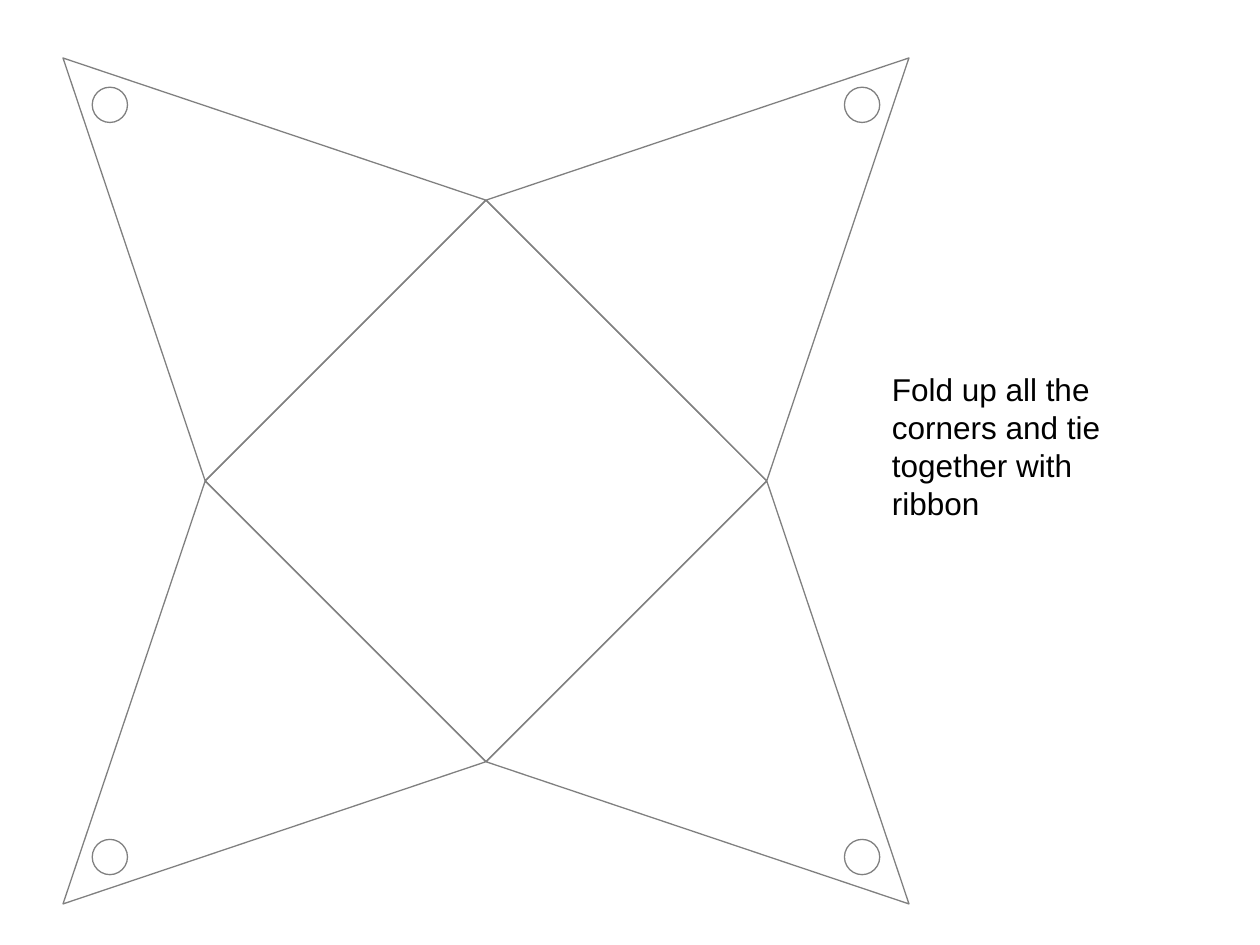
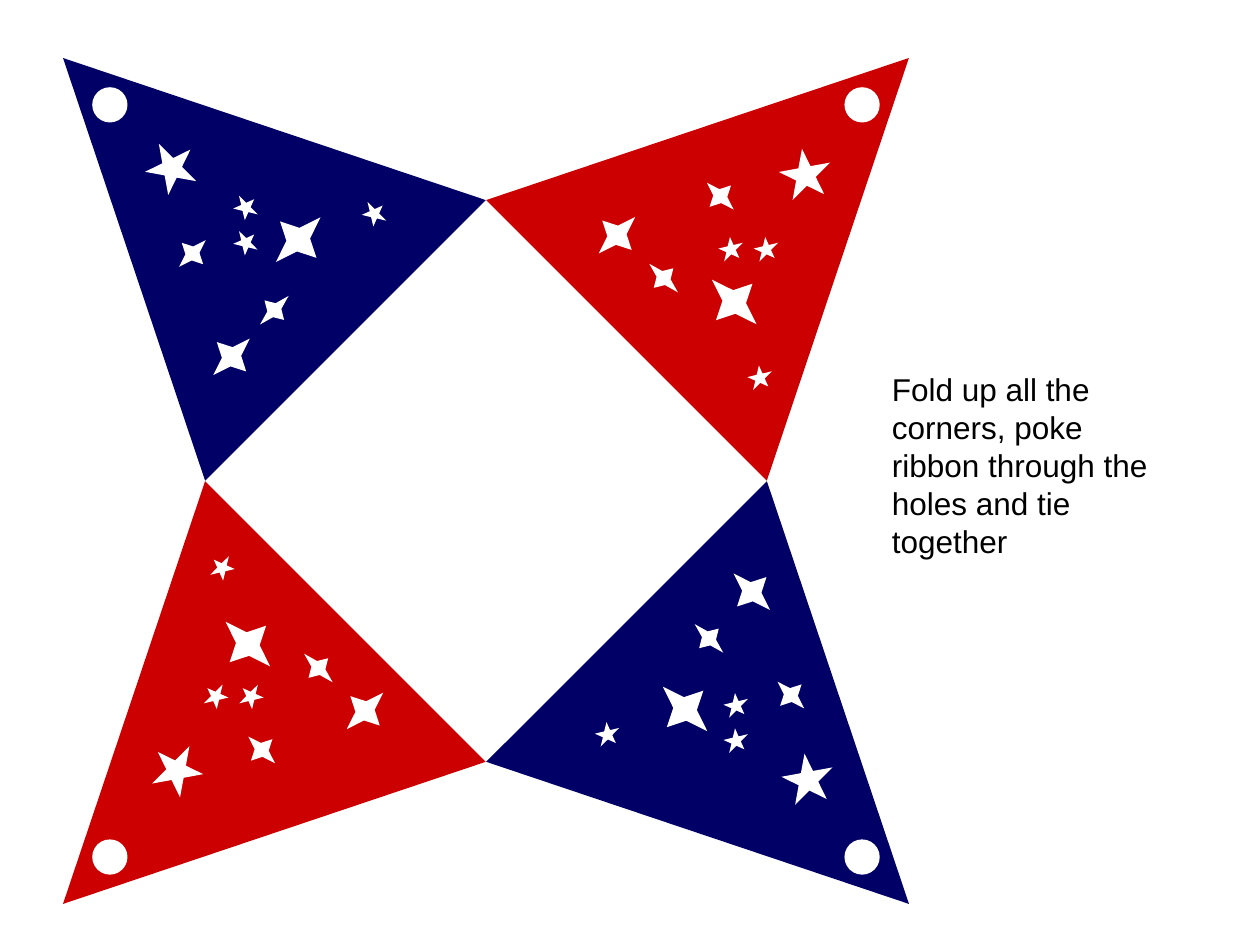
from collections import namedtuple

from pptx import Presentation
from pptx.dml.color import RGBColor
from pptx.enum.shapes import MSO_SHAPE as Preset
from pptx.enum.text import MSO_AUTO_SIZE as AutoSize
from pptx.util import Inches, Pt

COLORS = {"paper": "FFFFFF", "outline": "808080", "navy": "000066",
          "red": "CC0000", "ink": "000000"}
FONT = "Arial"
SLIDE_WIDTH, SLIDE_HEIGHT = Inches(10), Inches(7.5)
COLUMN = SLIDE_WIDTH / 100
ROW = SLIDE_HEIGHT / 75

Box = namedtuple("Box", "left top width height")
Flap = namedtuple("Flap", "quarter color drift lead_tilt spark_tilt star_tilt")
Spark = namedtuple("Spark", "x y width height")

PATTERN_BOX = Box(4.97, 4.57, 67.2, 67.2)
BASE_SIDE = 31.5
FLAP_HEIGHT = 31.7
FLAP_REACH = 22.36
HOLE_REACH = 29.85
HOLE_SIZE = 2.8

FLAPS = [
    Flap(0, "navy", (0, 0), 45, 45, 135),
    Flap(3, "red", (1.6, 1.6), 315, 45, 135),
    Flap(1, "red", (-0.8, -2.85), 135, 45, 315),
    Flap(2, "navy", (0.9, -1.05), 135, 135, 45),
]
FOUR_POINT = [
    Spark(21.1, 8.8, 4.1, 3.3),
    Spark(15.8, 18.1, 5, 4.1),
    Spark(24.2, 17, 3, 2.4),
    Spark(17.7, 12.5, 3.2, 2.2),
]
FIVE_POINT = [
    Spark(25.7, 23.9, 4.2, 3.8),
    Spark(19.9, 17.9, 2.1, 1.7),
    Spark(19.9, 20.7, 2.1, 1.7),
    Spark(9.7, 20.2, 2.1, 1.7),
]


def rgb(name):
    """Return the named colour."""
    return RGBColor.from_string(COLORS[name])


def turn(x, y, quarter):
    """Turn an offset clockwise by quarter circles."""
    for _ in range(quarter):
        x, y = -y, x
    return x, y


def add_piece(shapes, preset, box, offset, size, tilt=0, fill="paper", line=None):
    """Add a paper piece centred at an offset from the middle of the box."""
    width, height = size
    left = box.left + box.width / 2 + offset[0] - width / 2
    top = box.top + box.height / 2 + offset[1] - height / 2
    piece = shapes.add_shape(preset, round(left * COLUMN), round(top * ROW),
                             round(width * COLUMN), round(height * ROW))
    piece.rotation = tilt
    piece.shadow.inherit = False
    piece.fill.solid()
    piece.fill.fore_color.rgb = rgb(fill)
    if line:
        piece.line.color.rgb = rgb(line)
        piece.line.width = Pt(0.75)
    else:
        piece.line.fill.background()
    return piece


def add_flap(slide, box, quarter, fill="paper", line=None):
    """Add one corner flap with its ribbon hole."""
    flap = slide.shapes.add_group_shape().shapes
    add_piece(flap, Preset.ISOSCELES_TRIANGLE, box,
              turn(FLAP_REACH, FLAP_REACH, quarter), (BASE_SIDE, FLAP_HEIGHT),
              (135 + 90 * quarter) % 360, fill, line)
    add_piece(flap, Preset.OVAL, box, turn(HOLE_REACH, HOLE_REACH, quarter),
              (HOLE_SIZE, HOLE_SIZE), line=line)


def add_sparks(slide, box, flap):
    """Scatter the white stars over one flap."""
    sky = slide.shapes.add_group_shape().shapes

    def place(preset, spark, tilt):
        """Add one star, turned with its flap."""
        x, y = turn(spark.x, spark.y, flap.quarter)
        offset = x + flap.drift[0], y + flap.drift[1]
        return add_piece(sky, preset, box, offset, (spark.width, spark.height), tilt)

    for index, spark in enumerate(FOUR_POINT):
        tilt = flap.spark_tilt if index else flap.lead_tilt
        place(Preset.STAR_4_POINT, spark, tilt).adjustments[0] = 0.206
    for spark in FIVE_POINT:
        place(Preset.STAR_5_POINT, spark, flap.star_tilt)


def add_instruction(slide, box, wording):
    """Add the folding instruction beside the pattern."""
    instruction = slide.shapes.add_textbox(
        round(box.left * COLUMN), round(box.top * ROW),
        round(box.width * COLUMN), round(box.height * ROW))
    frame = instruction.text_frame
    frame.word_wrap = True
    frame.auto_size = AutoSize.SHAPE_TO_FIT_TEXT
    paragraph = frame.paragraphs[0]
    paragraph.text = wording
    paragraph.font.name = FONT
    paragraph.font.size = Pt(18)
    paragraph.font.color.rgb = rgb("ink")


def build_plain_pattern(slide, box):
    """Draw the outlined box pattern."""
    add_piece(slide.shapes, Preset.RECTANGLE, box, (0, 0),
              (BASE_SIDE, BASE_SIDE), 45, line="outline")
    for flap in FLAPS:
        add_flap(slide, box, flap.quarter, line="outline")
    add_instruction(slide, Box(69.8, 28.9, 23, 13),
                    "Fold up all the corners and tie together with ribbon")


def build_starry_pattern(slide, box):
    """Draw the coloured box pattern with stars."""
    for flap in FLAPS:
        add_flap(slide, box, flap.quarter, fill=flap.color)
    add_instruction(slide, Box(69.8, 28.9, 23, 16),
                    "Fold up all the corners, poke ribbon through the holes "
                    "and tie together")
    for flap in FLAPS:
        add_sparks(slide, box, flap)


def main():
    """Build both patterns and save them."""
    deck = Presentation()
    deck.slide_width, deck.slide_height = SLIDE_WIDTH, SLIDE_HEIGHT
    for build in (build_plain_pattern, build_starry_pattern):
        build(deck.slides.add_slide(deck.slide_layouts[6]), PATTERN_BOX)
    deck.save("out.pptx")


if __name__ == "__main__":
    main()
